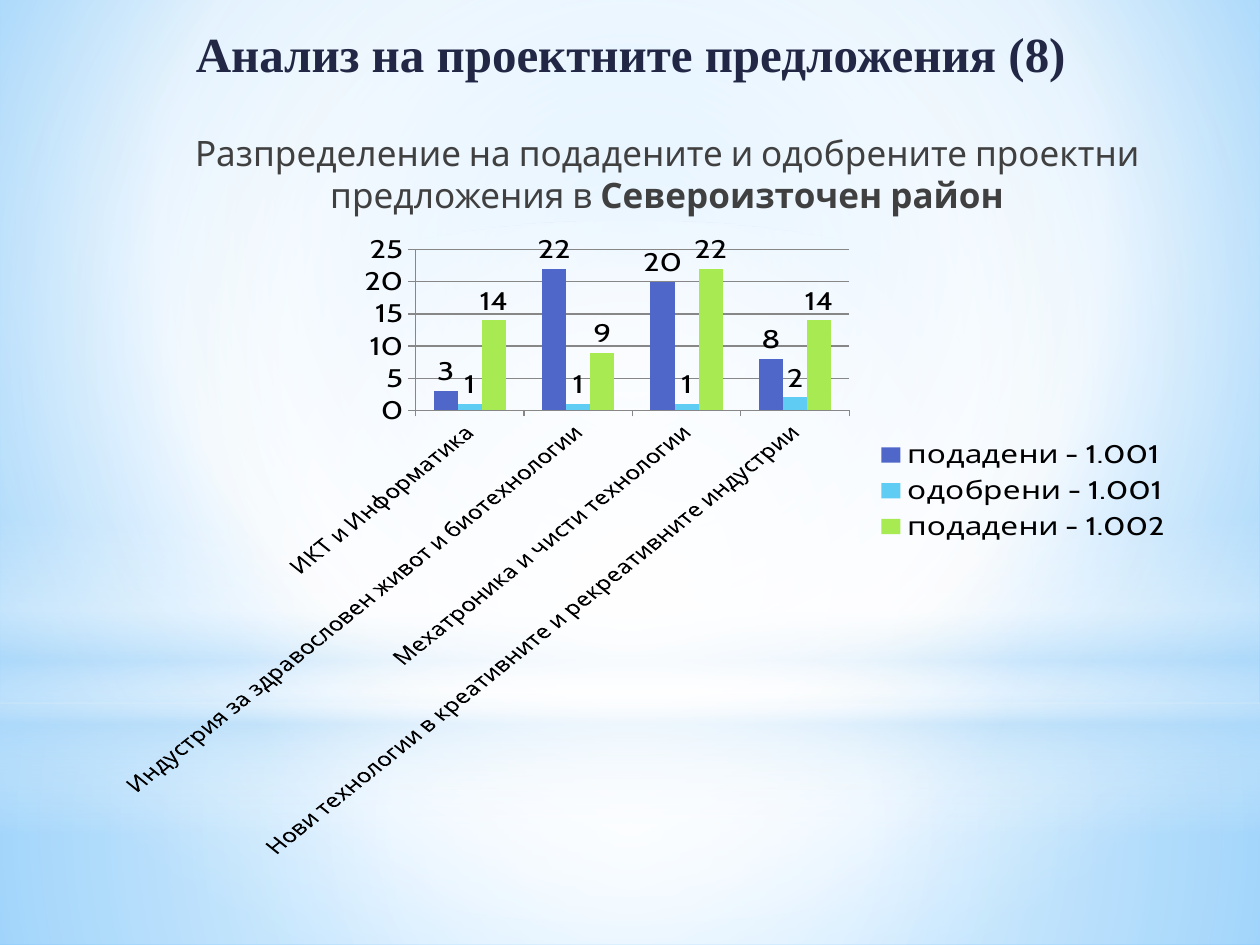
from dataclasses import dataclass

from lxml.etree import SubElement
from pptx import Presentation
from pptx.chart.data import CategoryChartData as ChartData
from pptx.dml.color import RGBColor as RGB
from pptx.enum.chart import XL_CHART_TYPE as ChartType
from pptx.enum.chart import XL_LABEL_POSITION as LabelPos
from pptx.enum.chart import XL_LEGEND_POSITION as LegendPos
from pptx.enum.chart import XL_TICK_MARK as Tick
from pptx.enum.shapes import MSO_SHAPE as Shape
from pptx.enum.text import MSO_ANCHOR as Anchor
from pptx.enum.text import MSO_AUTO_SIZE as AutoSize
from pptx.enum.text import PP_ALIGN as Align
from pptx.oxml import parse_xml
from pptx.oxml.ns import nsdecls, qn
from pptx.util import Inches, Pt

NAVY = RGB(0x21, 0x27, 0x45)
GREY = RGB(0x40, 0x40, 0x40)
LINE = RGB(0x87, 0x87, 0x87)
BLACK = RGB(0x00, 0x00, 0x00)
WHITE = RGB(0xFF, 0xFF, 0xFF)
PALE = RGB(0xB4, 0xDC, 0xFA)
SKY = RGB(0x9E, 0xD5, 0xFF)
AZURE = RGB(0x5B, 0xB9, 0xFF)
BLUE = RGB(0x4E, 0x67, 0xC8)
CYAN = RGB(0x5E, 0xCC, 0xF3)
LIME = RGB(0xA7, 0xEA, 0x52)
FONT = "Cabin"
CENTER = (50, 50, 50, 50)


@dataclass
class Stop:
    pos: int
    color: RGB
    alpha: int = 100


@dataclass
class Band:
    """A soft background layer; without a focus its gradient runs down."""
    kind: Shape
    top: float
    height: float
    stops: list[Stop]
    focus: tuple | None = CENTER


@dataclass
class Series:
    name: str
    values: tuple
    color: RGB


BANDS = [
    Band(Shape.RECTANGLE, 5.58, 1.92,
         [Stop(0, WHITE, 91), Stop(37, WHITE, 76), Stop(100, PALE, 79)]),
    Band(Shape.RECTANGLE, 0, 5.58,
         [Stop(0, WHITE, 89), Stop(48, WHITE, 62), Stop(100, PALE, 79)]),
    Band(Shape.RECTANGLE, 4.12, 2.5,
         [Stop(0, WHITE, 0), Stop(29, WHITE, 30), Stop(45, PALE, 40),
          Stop(55, WHITE, 26), Stop(65, PALE, 60), Stop(100, WHITE, 0)], None),
    Band(Shape.OVAL, 1.75, 5.58, [Stop(0, WHITE), Stop(56, WHITE, 0)]),
]
FIELDS = [
    "ИКТ и Информатика",
    "Индустрия за здравословен живот и биотехнологии",
    "Мехатроника и чисти технологии",
    "Нови технологии в креативните и рекреативните индустрии",
]
SERIES = [
    Series("подадени - 1.001", (3, 22, 20, 8), BLUE),
    Series("одобрени - 1.001", (1, 1, 1, 2), CYAN),
    Series("подадени - 1.002", (14, 9, 22, 14), LIME),
]


def style(font, **values) -> None:
    font.color.rgb = values.pop("color")
    for key, value in values.items():
        setattr(font, key, value)


def place(shape, left: float, top: float, width: float, height: float) -> None:
    box = {"left": left, "top": top, "width": width, "height": height}
    for key, value in box.items():
        setattr(shape, key, Inches(value))


def fade(fill_xml, stops: list[Stop], focus: tuple | None) -> None:
    """Swap a solid fill element for a gradient."""
    marks = "".join(
        f'<a:gs pos="{s.pos * 1000}"><a:srgbClr val="{s.color}">'
        f'<a:alpha val="{s.alpha * 1000}"/></a:srgbClr></a:gs>' for s in stops)
    if focus:
        sides = " ".join(f'{k}="{v * 1000}"' for k, v in zip("ltrb", focus))
        way = f'<a:path path="circle"><a:fillToRect {sides}/></a:path>'
    else:
        way = '<a:lin ang="5400000" scaled="0"/>'
    grad = parse_xml(f'<a:gradFill {nsdecls("a")} rotWithShape="1">'
                     f'<a:gsLst>{marks}</a:gsLst>{way}</a:gradFill>')
    fill_xml.getparent().replace(fill_xml, grad)


def draw_band(slide, band: Band, depth: int) -> None:
    shape = slide.shapes.add_shape(band.kind, 0, Inches(band.top),
                                   Inches(10), Inches(band.height))
    shape.shadow.inherit = False
    shape.line.fill.background()
    shape.fill.solid()
    fade(shape.element.spPr.find(qn("a:solidFill")), band.stops, band.focus)
    slide.shapes.element.insert(depth, shape.element)


def draw_chart(slide) -> None:
    data = ChartData()
    data.categories = FIELDS
    for item in SERIES:
        data.add_series(item.name, item.values)
    chart = slide.shapes.add_chart(
        ChartType.COLUMN_CLUSTERED, Inches(0.75), Inches(1.86),
        Inches(8.66), Inches(4.96), data).chart
    style(chart.font, name=FONT, size=Pt(18), color=BLACK)
    chart.has_title = False
    chart.has_legend = True
    chart.legend.position = LegendPos.RIGHT
    chart.legend.include_in_layout = False

    # Columns and their values
    plot = chart.plots[0]
    plot.gap_width, plot.overlap = 150, 0
    plot.vary_by_categories = False
    for item, series in zip(SERIES, plot.series):
        series.format.fill.solid()
        series.format.fill.fore_color.rgb = item.color
        labels = series.data_labels
        labels.show_value = True
        labels.position = LabelPos.OUTSIDE_END

    # Axes, with the field names slanted by 45 degrees
    cat, val = chart.category_axis, chart.value_axis
    for axis in (cat, val):
        axis.major_tick_mark, axis.minor_tick_mark = Tick.OUTSIDE, Tick.NONE
        axis.format.line.color.rgb = LINE
    style(cat.tick_labels.font, name=FONT, size=Pt(14), color=BLACK)
    cat._element.txPr.find(qn("a:bodyPr")).set("rot", "-2700000")
    val.minimum_scale, val.maximum_scale, val.major_unit = 0, 25, 5
    val.major_gridlines.format.line.color.rgb = LINE


def write_title(title) -> None:
    place(title, 0.2, 0, 9.61, 0.84)
    title.text_frame.vertical_anchor = Anchor.MIDDLE
    para = title.text_frame.paragraphs[0]
    para.alignment = Align.CENTER
    run = para.add_run()
    run.text = "Анализ на проектните предложения (8)"
    style(run.font, name="Times New Roman", size=Pt(28), bold=True, color=NAVY)


def write_body(body) -> None:
    place(body, 0.98, 0.99, 8.58, 5.78)
    frame = body.text_frame
    frame.auto_size = AutoSize.NONE
    frame.vertical_anchor = Anchor.TOP
    para = frame.paragraphs[0]
    para.alignment = Align.CENTER
    para.space_before, para.space_after = Pt(4), Pt(3)
    props = para._p.get_or_add_pPr()
    props.set("marL", str(Inches(0.05)))
    props.set("indent", "0")
    SubElement(props, qn("a:buNone"))
    parts = [
        ("Разпределение на подадените и одобрените проектни предложения в ", False),
        ("Североизточен район", True),
    ]
    for text, bold in parts:
        run = para.add_run()
        run.text = text
        style(run.font, name=FONT, size=Pt(20), bold=bold, color=GREY)


def main() -> None:
    deck = Presentation()
    deck.slide_width, deck.slide_height = Inches(10), Inches(7.5)
    slide = deck.slides.add_slide(deck.slide_layouts[1])
    title, body = slide.placeholders

    # Background
    back = slide.background
    back.fill.solid()
    fade(slide.element.find(".//" + qn("p:bgPr")).find(qn("a:solidFill")),
         [Stop(0, SKY), Stop(60, WHITE), Stop(100, AZURE)], (20, 10, 20, 60))
    for depth, band in enumerate(BANDS, start=2):
        draw_band(slide, band, depth)

    # Content, with the body text in front of the chart
    write_title(title)
    draw_chart(slide)
    write_body(body)
    slide.shapes.element.append(body.element)
    deck.save("out.pptx")


if __name__ == "__main__":
    main()
